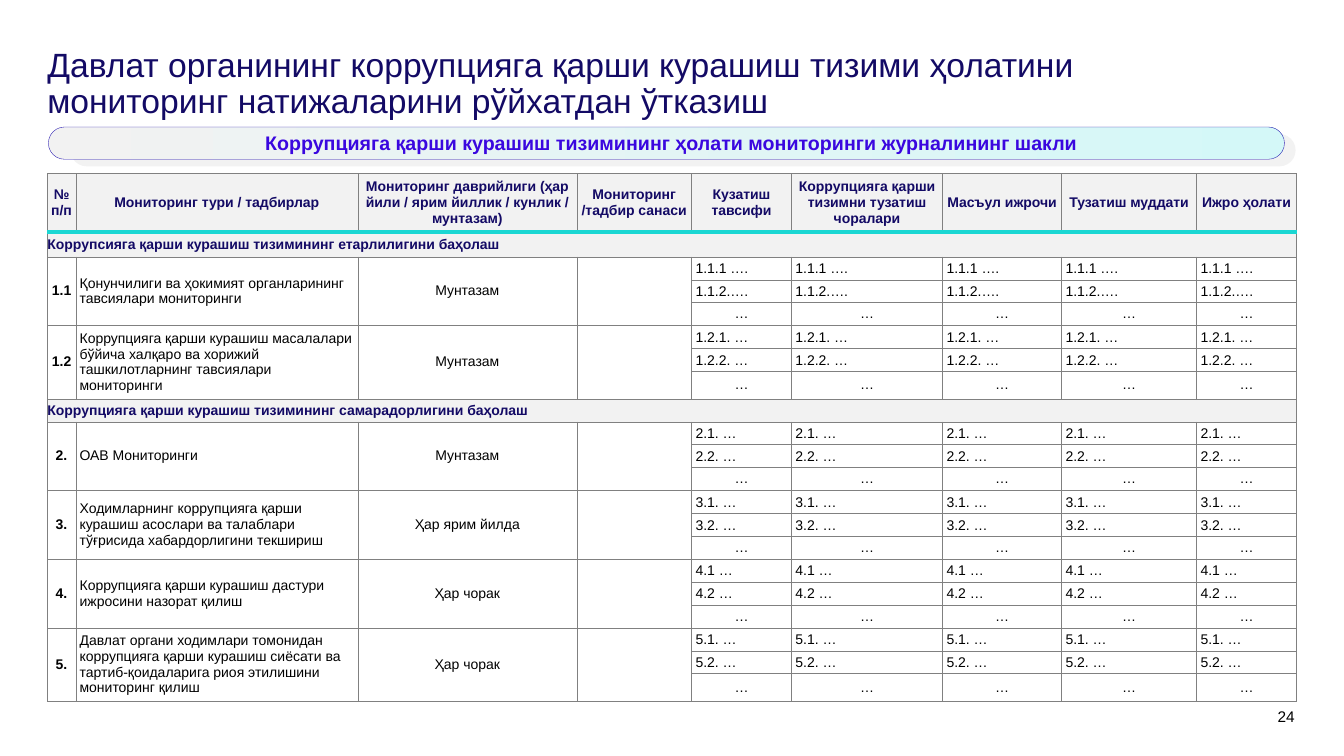
from lxml.etree import SubElement
from pptx import Presentation
from pptx.dml.color import RGBColor
from pptx.enum.shapes import MSO_SHAPE
from pptx.enum.text import MSO_ANCHOR, PP_ALIGN
from pptx.oxml.ns import qn
from pptx.util import Inches, Pt

COLORS = {"navy": "130A65", "violet": "3A07DF", "outline": "2112AE", "panel": "F2F2F2",
          "aqua": "D4F8F8", "teal": "1BD7D3", "grid": "808080", "black": "000000"}
LEFT, MIDDLE, BOTTOM = PP_ALIGN.LEFT, MSO_ANCHOR.MIDDLE, MSO_ANCHOR.BOTTOM
CENTER, RIGHT = PP_ALIGN.CENTER, PP_ALIGN.RIGHT

TITLE = ("Давлат органининг коррупцияга қарши курашиш тизими ҳолатини "
         "мониторинг натижаларини рўйхатдан ўтказиш")
JOURNAL_NAME = "Коррупцияга қарши курашиш тизимининг ҳолати мониторинги журналининг шакли"
HEADINGS = ["№ п/п", "Мониторинг тури / тадбирлар",
            "Мониторинг даврийлиги (ҳар йили / ярим йиллик / кунлик / мунтазам)",
            "Мониторинг /тадбир санаси", "Кузатиш тавсифи",
            "Коррупцияга қарши тизимни тузатиш чоралари", "Масъул ижрочи",
            "Тузатиш муддати", "Ижро ҳолати"]
SECTIONS = [
    ("Коррупсияга қарши курашиш тизимининг етарлилигини баҳолаш", [
        ("1.1", "Қонунчилиги ва ҳокимият органларининг тавсиялари мониторинги",
         "Мунтазам", ["1.1.1 ….", "1.1.2.…."], 2.87),
        ("1.2", "Коррупцияга қарши курашиш масалалари бўйича халқаро ва хорижий "
         "ташкилотларнинг тавсиялари мониторинги",
         "Мунтазам", ["1.2.1. …", "1.2.2. …"], 3.3)]),
    ("Коррупцияга қарши курашиш тизимининг самарадорлигини баҳолаш", [
        ("2.", "ОАВ Мониторинги", "Мунтазам", ["2.1. …", "2.2. …"], 2.87),
        ("3.", "Ходимларнинг коррупцияга қарши курашиш асослари ва талаблари "
         "тўғрисида хабардорлигини текшириш",
         "Ҳар ярим йилда", ["3.1. …", "3.2. …"], 2.87),
        ("4.", "Коррупцияга қарши курашиш дастури ижросини назорат қилиш",
         "Ҳар чорак", ["4.1 …", "4.2 …"], 2.87),
        ("5.", "Давлат органи ходимлари томонидан коррупцияга қарши курашиш сиёсати ва "
         "тартиб-қоидаларига риоя этилишини мониторинг қилиш",
         "Ҳар чорак", ["5.1. …", "5.2. …"], 3.3)]),
]
# Percent of the slide's width and height
COLUMN_SHARES = [2.1, 21, 16.28, 8.55, 7.43, 11.25, 8.85, 10.05, 7.43]
HEADER_SHARE, SECTION_SHARE, ENTRY_SHARE = 7.27, 3, 2.87
FIRST_DETAIL = 4


def assign(target, values):
    for name, value in values.items():
        setattr(target, name, value)


def color(name):
    return RGBColor.from_string(COLORS[name])


class JournalSlide:
    """Draws on one blank slide; all places are percents of its size."""

    font = "Arial"

    def __init__(self, deck):
        self.width, self.height = deck.slide_width, deck.slide_height
        self.slide = deck.slides.add_slide(deck.slide_layouts[6])

    def across(self, share):
        return round(self.width * share / 100)

    def down(self, share):
        return round(self.height * share / 100)

    def place(self, left, top, width, height):
        return self.across(left), self.down(top), self.across(width), self.down(height)

    def set_words(self, frame, words, size, ink, align=LEFT, bold=False, spacing=None):
        paragraph = frame.paragraphs[0]
        assign(paragraph, {"alignment": align, "line_spacing": spacing})
        run = paragraph.add_run()
        run.text = words
        assign(run.font, {"name": self.font, "size": Pt(size), "bold": bold})
        run.font.color.rgb = color(ink)

    def label(self, area, words, size, ink, **style):
        frame = self.slide.shapes.add_textbox(*self.place(*area)).text_frame
        assign(frame, {"word_wrap": True, "margin_left": 0, "margin_right": 0,
                       "margin_top": 0, "margin_bottom": 0})
        self.set_words(frame, words, size, ink, **style)

    def pill(self, group, area):
        pill = group.shapes.add_shape(MSO_SHAPE.ROUNDED_RECTANGLE, *self.place(*area))
        pill.adjustments[0] = 0.5
        pill.shadow.inherit = False
        return pill

    def banner(self, words):
        group = self.slide.shapes.add_group_shape()
        backdrop = self.pill(group, (5.25, 17.73, 91.15, 4.27))
        backdrop.fill.solid()
        backdrop.fill.fore_color.rgb = color("panel")
        backdrop.line.fill.background()

        front = self.pill(group, (3.6, 16.8, 91.97, 4.27))
        front.fill.gradient()
        front.fill.gradient_angle = 0
        for stop, name, position in zip(front.fill.gradient_stops, ("panel", "aqua"), (0, 1)):
            stop.color.rgb = color(name)
            stop.position = position
        front.line.color.rgb = color("outline")
        front.line.width = Pt(0.25)
        assign(front.text_frame, {"word_wrap": True, "vertical_anchor": MIDDLE,
                                  "margin_left": Inches(0.2), "margin_right": Inches(0.1),
                                  "margin_top": Inches(0.05), "margin_bottom": Inches(0.05)})
        self.set_words(front.text_frame, words, 14, "violet", CENTER, True)

    def border(self, cell, **special):
        """Rule all four sides thin grey, save the sides given as (colour, points)."""
        properties = cell._tc.get_or_add_tcPr()
        for side in "LRTB":
            name, points = special.get(side, ("grid", 0.25))
            line = SubElement(properties, qn(f"a:ln{side}"), w=str(Pt(points)))
            SubElement(SubElement(line, qn("a:solidFill")), qn("a:srgbClr"), val=COLORS[name])

    def fill_cell(self, cell, words, ink="black", align=LEFT, bold=False,
                  anchor=MIDDLE, side=0.04, edge=0.03, shaded=False):
        assign(cell, {"vertical_anchor": anchor,
                      "margin_left": Inches(side), "margin_right": Inches(side),
                      "margin_top": Inches(edge), "margin_bottom": Inches(edge)})
        if shaded:
            cell.fill.solid()
            cell.fill.fore_color.rgb = color("panel")
        self.set_words(cell.text_frame, words, 10, ink, align, bold)

    def journal(self, left, top):
        row_shares = [HEADER_SHARE]
        for _, entries in SECTIONS:
            row_shares.append(SECTION_SHARE)
            for *_, last_share in entries:
                row_shares += [ENTRY_SHARE, ENTRY_SHARE, last_share]
        table = self.slide.shapes.add_table(
            len(row_shares), len(COLUMN_SHARES),
            *self.place(left, top, sum(COLUMN_SHARES), sum(row_shares))).table
        assign(table, {"first_row": False, "horz_banding": False})
        for column, share in zip(table.columns, COLUMN_SHARES):
            column.width = self.across(share)
        for index, (row, share) in enumerate(zip(table.rows, row_shares)):
            row.height = self.down(share)
            accent = {0: {"B": ("teal", 3)}, 1: {"T": ("teal", 3)}}.get(index, {})
            for cell in row.cells:
                self.border(cell, **accent)
                cell.fill.background()

        for column, heading in enumerate(HEADINGS):
            self.fill_cell(table.cell(0, column), heading, "navy", CENTER, True,
                           side=0.04 if column else 0, edge=0.04, shaded=True)
        row = 1
        for section, entries in SECTIONS:
            heading = table.cell(row, 0)
            heading.merge(table.cell(row, len(COLUMN_SHARES) - 1))
            self.fill_cell(heading, section, "navy", bold=True, side=0,
                           edge=0.04 if row == 1 else 0.03, shaded=True)
            row += 1
            for entry in entries:
                self.entry(table, row, *entry[:4])
                row += 3

    def entry(self, table, row, number, activity, period, details):
        for column in range(FIRST_DETAIL):
            table.cell(row, column).merge(table.cell(row + 2, column))
        self.fill_cell(table.cell(row, 0), number, align=CENTER, bold=True, side=0)
        self.fill_cell(table.cell(row, 1), activity)
        self.fill_cell(table.cell(row, 2), period, align=CENTER)
        for column in range(FIRST_DETAIL, len(COLUMN_SHARES)):
            for offset, detail in enumerate(details):
                self.fill_cell(table.cell(row + offset, column), detail, anchor=BOTTOM)
            self.fill_cell(table.cell(row + 2, column), "…", align=CENTER)


def main():
    deck = Presentation()
    assign(deck, {"slide_width": Inches(13.33), "slide_height": Inches(7.5)})
    page = JournalSlide(deck)
    page.label((93.1, 93.6, 3.23, 2.13), "24", 11, "black", align=RIGHT)
    page.journal(3.53, 22.93)
    page.label((3.53, 6.4, 90.17, 6.4), TITLE, 24, "navy", spacing=0.9)
    page.banner(JOURNAL_NAME)
    deck.save("out.pptx")


if __name__ == "__main__":
    main()
